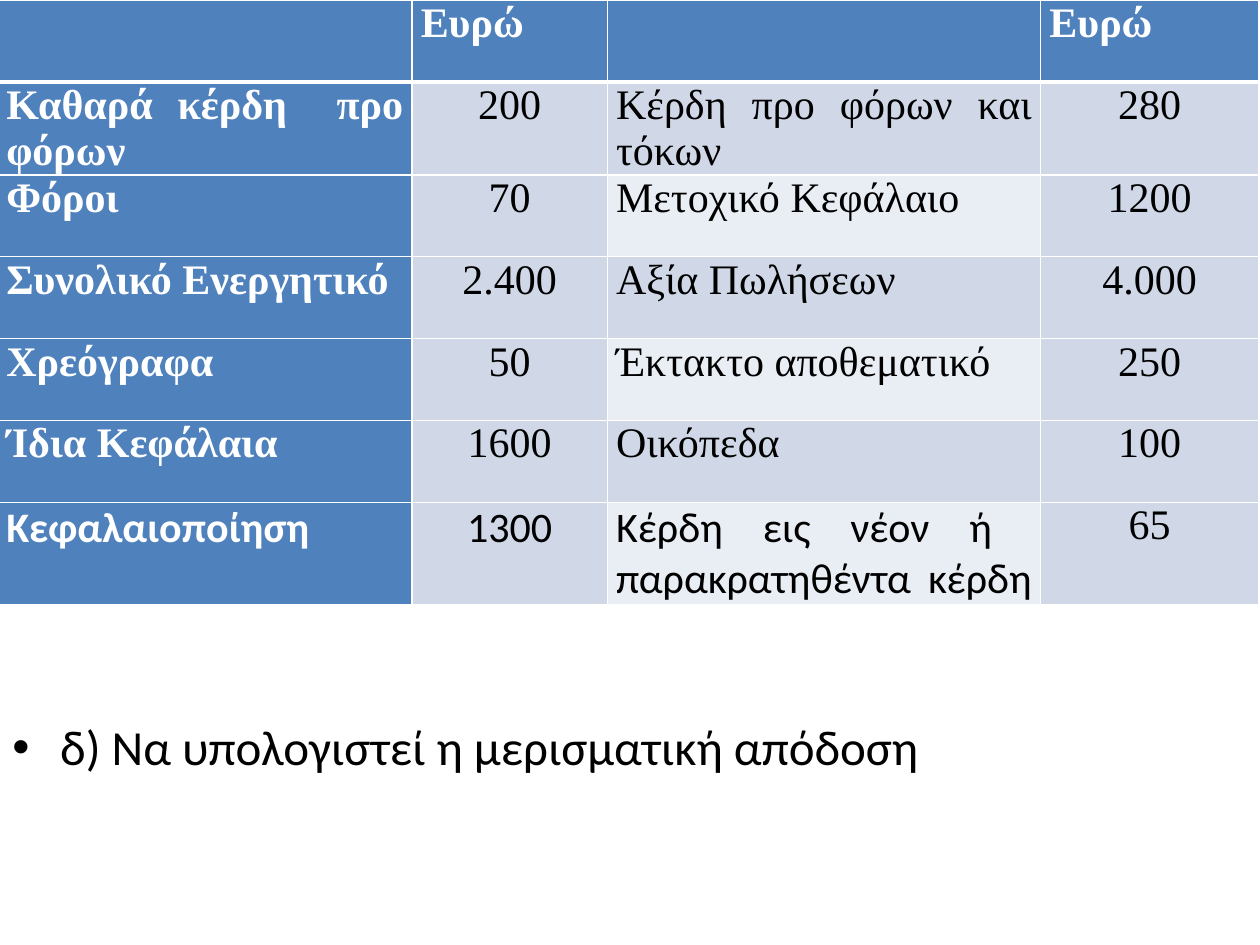
"""Builds a slide with a table of company figures in euro and one exercise question."""
from lxml.etree import SubElement
from pptx import Presentation
from pptx.dml.color import RGBColor as Color
from pptx.enum.text import PP_ALIGN as Align
from pptx.oxml.ns import qn
from pptx.util import Inches, Pt

COLORS = {"header": "4F81BD", "band": "D0D8E8", "light": "E9EDF4",
          "white": "FFFFFF", "black": "000000"}
SERIF, SANS = "Times New Roman", "Calibri"
WIDTH, HEIGHT = 10, 7.5
TABLE_LEFT, ROW_HEIGHT = -0.02, 0.65
COLUMN_WIDTHS = (3.29, 1.55, 3.44, 1.73)
CELL_INSET = 0.07
QUESTION_TOP = 0.752 * HEIGHT
QUESTION_INDENT = 0.38

ROWS = [
    ("", "Ευρώ", "", "Ευρώ"),
    ("Καθαρά κέρδη  προ φόρων", "200", "Κέρδη προ φόρων και τόκων", "280"),
    ("Φόροι", "70", "Μετοχικό Κεφάλαιο", "1200"),
    ("Συνολικό Ενεργητικό", "2.400", "Αξία Πωλήσεων", "4.000"),
    ("Χρεόγραφα", "50", "Έκτακτο αποθεματικό", "250"),
    ("Ίδια Κεφάλαια ", "1600", "Οικόπεδα", "100"),
    ("Κεφαλαιοποίηση ", "1300", "Κέρδη εις νέον ή  παρακρατηθέντα κέρδη ", "65"),
]
SANS_CELLS = {(6, 0), (6, 1), (6, 2)}
QUESTION = "δ) Να υπολογιστεί η μερισματική απόδοση "


def write(frame, text, size=24, font=SERIF, color="black", bold=False, align=Align.JUSTIFY):
    para = frame.paragraphs[0]
    para.alignment = align
    span = para.add_run()
    span.text = text
    span.font.size, span.font.name, span.font.bold = Pt(size), font, bold
    span.font.color.rgb = Color.from_string(COLORS[color])
    return para


def set_borders(cell, **widths):
    properties = cell._tc.get_or_add_tcPr()
    for position, side in enumerate(("L", "R", "T", "B")):
        line = properties.makeelement(qn(f"a:ln{side}"), {"w": str(Pt(widths.get(side, 1)))})
        fill = SubElement(line, qn("a:solidFill"))
        SubElement(fill, qn("a:srgbClr"), val=COLORS["white"])
        properties.insert(position, line)


def cell_fill(row, column):
    if row == 0 or column == 0:
        return "header"
    return "light" if column == 2 and row % 2 == 0 else "band"


def add_figures(page):
    frame = page.shapes.add_table(len(ROWS), len(COLUMN_WIDTHS), Inches(TABLE_LEFT), 0,
                                  Inches(sum(COLUMN_WIDTHS)), Inches(ROW_HEIGHT * len(ROWS)))
    table = frame.table
    for column, width in zip(table.columns, COLUMN_WIDTHS):
        column.width = Inches(width)
    for row, texts in enumerate(ROWS):
        table.rows[row].height = Inches(ROW_HEIGHT)
        for column, text in enumerate(texts):
            cell = table.cell(row, column)
            fill = cell_fill(row, column)
            cell.fill.solid()
            cell.fill.fore_color.rgb = Color.from_string(COLORS[fill])
            cell.margin_left = cell.margin_right = Inches(CELL_INSET)
            cell.margin_top = cell.margin_bottom = 0
            set_borders(cell, T=3 if row == 1 else 1, B=3 if row == 0 else 1)
            if text:
                heading = fill == "header"
                number = column % 2 == 1 and not heading
                write(cell.text_frame, text, bold=heading,
                      font=SANS if (row, column) in SANS_CELLS else SERIF,
                      color="white" if heading else "black",
                      align=Align.CENTER if number else Align.JUSTIFY)


def add_question(page):
    box = page.shapes.add_textbox(0, Inches(QUESTION_TOP), Inches(WIDTH),
                                  Inches(HEIGHT - QUESTION_TOP))
    box.text_frame.word_wrap = True
    para = write(box.text_frame, QUESTION, size=28, font=SANS)
    para.space_before = Pt(0.2 * 28)
    properties = para._p.get_or_add_pPr()
    indent = Inches(QUESTION_INDENT)
    properties.set("marL", str(indent))
    properties.set("indent", str(-indent))
    SubElement(properties, qn("a:buFont"), typeface="Arial")
    SubElement(properties, qn("a:buChar"), char="•")


def main():
    deck = Presentation()
    deck.slide_width, deck.slide_height = Inches(WIDTH), Inches(HEIGHT)
    page = deck.slides.add_slide(deck.slide_layouts[6])
    add_figures(page)
    add_question(page)
    deck.save("out.pptx")


if __name__ == "__main__":
    main()
